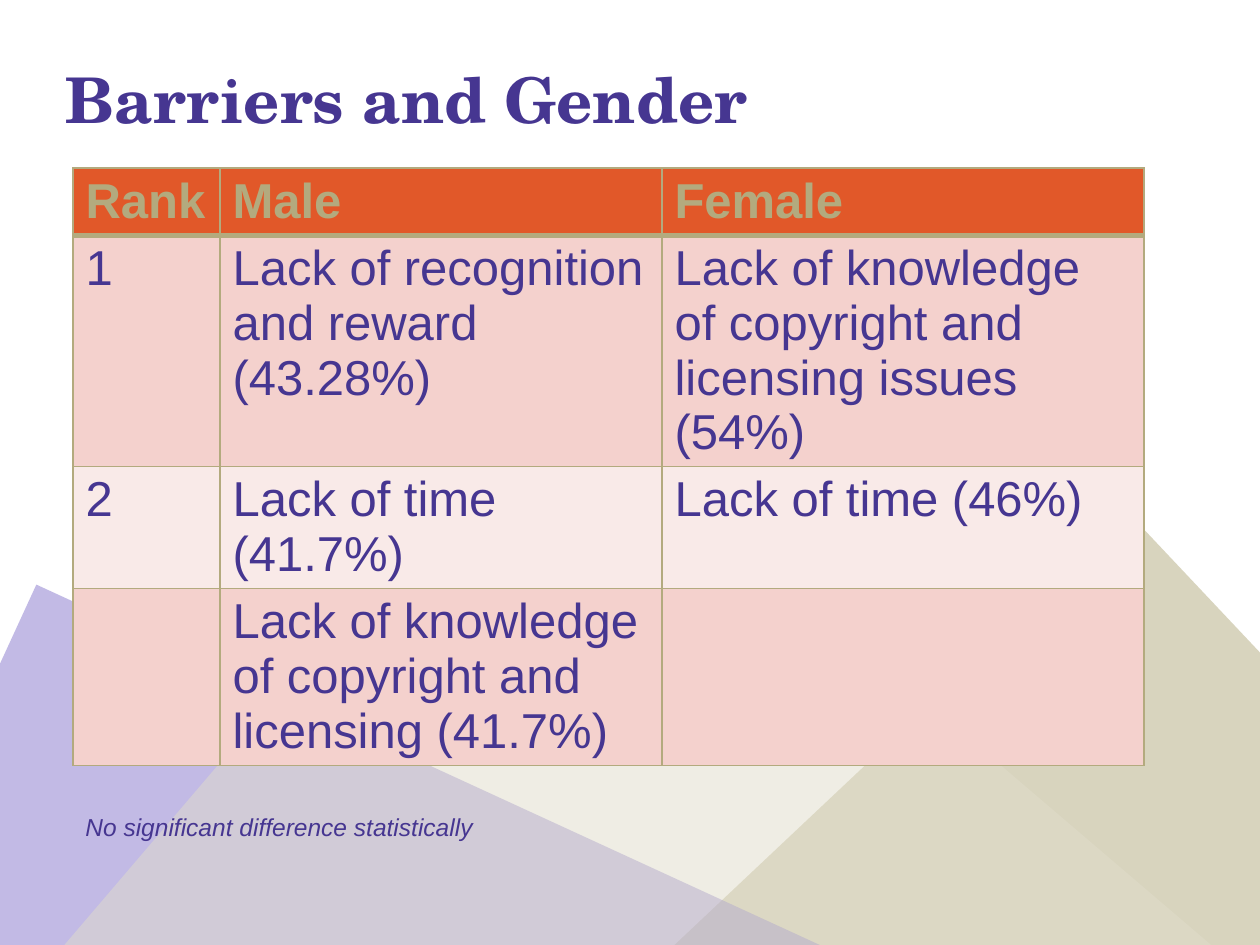
from lxml import etree
from pptx import Presentation
from pptx.dml.color import RGBColor
from pptx.enum.shapes import MSO_SHAPE
from pptx.enum.text import MSO_ANCHOR, PP_ALIGN
from pptx.oxml.ns import qn
from pptx.util import Emu, Pt

PX = 914400 / 126
RECTANGLE = MSO_SHAPE.RECTANGLE
BOTTOM = MSO_ANCHOR.BOTTOM
LEFT = PP_ALIGN.LEFT

PURPLE = RGBColor(0x46, 0x36, 0x91)
LILAC = RGBColor(0x86, 0x77, 0xCC)
KHAKI = RGBColor(0xB3, 0xAA, 0x7E)
SAND = RGBColor(0xE1, 0xDD, 0xCB)
ORANGE = RGBColor(0xE1, 0x58, 0x29)
PINK = RGBColor(0xF4, 0xD1, 0xCD)
PALE_PINK = RGBColor(0xF9, 0xEA, 0xE8)

# left, top, rotation, colour
BACKDROP = [
    (620, 730, 46.7, KHAKI),
    (-212, 751, 24.7, LILAC),
    (113, 590, 40.5, SAND),
]
BARRIERS = [
    ("Rank", "Male", "Female"),
    ("1", "Lack of recognition and reward (43.28%)",
     "Lack of knowledge of copyright and licensing issues (54%)"),
    ("2", "Lack of time (41.7%)", "Lack of time (46%)"),
    ("", "Lack of knowledge of copyright and licensing (41.7%)", ""),
]
COLUMN_WIDTHS = (147, 442, 482)
ROW_HEIGHTS = (67, 231, 122, 177)


def px(length):
    return Emu(round(length * PX))


def box(*lengths):
    return [px(length) for length in lengths]


def style(paragraph, size, colour, name="Arial", bold=False, italic=False):
    font = paragraph.font
    font.name, font.size = name, Pt(size)
    font.bold, font.italic = bold, italic
    font.color.rgb = colour


def add_backdrop_square(slide, left, top, rotation, colour):
    square = slide.shapes.add_shape(RECTANGLE, *box(left, top, 1008, 968))
    square.rotation = rotation
    square.shadow.inherit = False
    square.line.fill.background()
    square.fill.solid()
    square.fill.fore_color.rgb = colour
    srgb = square.fill._xPr.find(".//" + qn("a:srgbClr"))
    etree.SubElement(srgb, qn("a:alpha"), val="50000")


def set_title(slide, text):
    title = slide.shapes.title
    title.left, title.top, title.width, title.height = box(53, -32, 1166, 174)
    title.text_frame.text = text
    title.text_frame.vertical_anchor = BOTTOM
    heading = title.text_frame.paragraphs[0]
    heading.alignment = LEFT
    style(heading, 36, PURPLE, name="TeX Gyre Schola", bold=True)


def set_borders(cell, bottom_width):
    """Outline the cell; the borders must precede its fill in the XML."""
    properties = cell._tc.get_or_add_tcPr()
    widths = {"a:lnL": 1, "a:lnR": 1, "a:lnT": 1, "a:lnB": bottom_width}
    for position, (side, width) in enumerate(widths.items()):
        line = etree.Element(qn(side), w=str(Pt(width)))
        fill = etree.SubElement(line, qn("a:solidFill"))
        etree.SubElement(fill, qn("a:srgbClr"), val=str(KHAKI))
        properties.insert(position, line)


def add_barrier_table(slide):
    frame = slide.shapes.add_table(
        len(ROW_HEIGHTS), len(COLUMN_WIDTHS),
        *box(73, 168, sum(COLUMN_WIDTHS), sum(ROW_HEIGHTS)))
    table = frame.table
    for column, width in zip(table.columns, COLUMN_WIDTHS):
        column.width = px(width)
    for index, (row, height) in enumerate(zip(table.rows, ROW_HEIGHTS)):
        row.height = px(height)
        header = index == 0
        background = ORANGE if header else PINK if index % 2 else PALE_PINK
        for cell, text in zip(row.cells, BARRIERS[index]):
            cell.text = text
            style(cell.text_frame.paragraphs[0], 28,
                  KHAKI if header else PURPLE, bold=header)
            cell.fill.solid()
            cell.fill.fore_color.rgb = background
            set_borders(cell, 3 if header else 1)
        if index == 1:
            for cell in row.cells:
                top = cell._tc.tcPr.find(qn("a:lnT"))
                top.set("w", str(Pt(3)))


def add_note(slide, text):
    note = slide.shapes.add_textbox(*box(73, 806, 415, 43))
    note.text_frame.text = text
    style(note.text_frame.paragraphs[0], 14, PURPLE, italic=True)


def main():
    presentation = Presentation()
    presentation.slide_width, presentation.slide_height = box(1260, 945)
    title_only = presentation.slide_layouts[5]
    slide = presentation.slides.add_slide(title_only)
    for square in BACKDROP:
        add_backdrop_square(slide, *square)
    set_title(slide, "Barriers and Gender")
    add_barrier_table(slide)
    add_note(slide, "No significant difference statistically")
    presentation.save("out.pptx")


if __name__ == "__main__":
    main()
